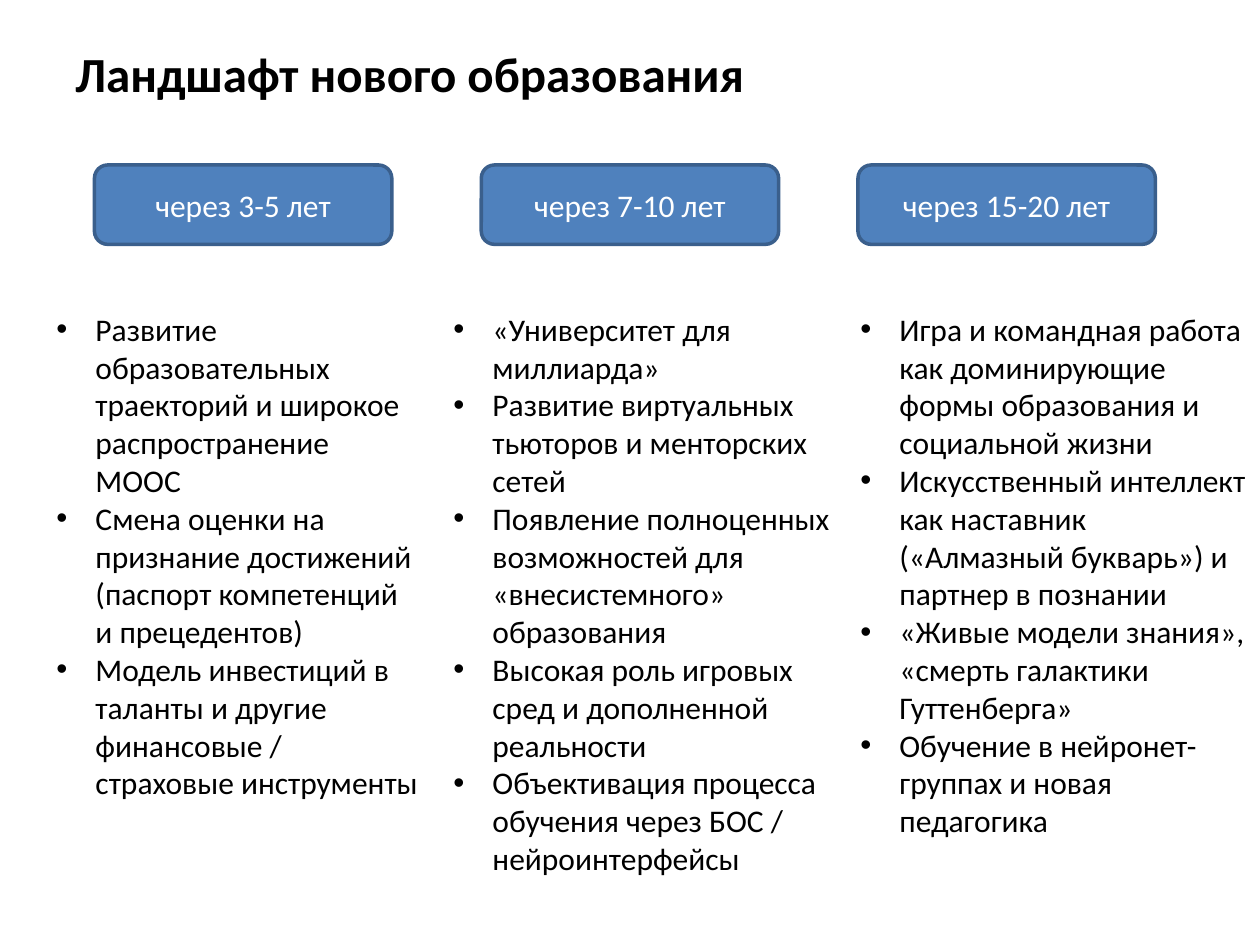
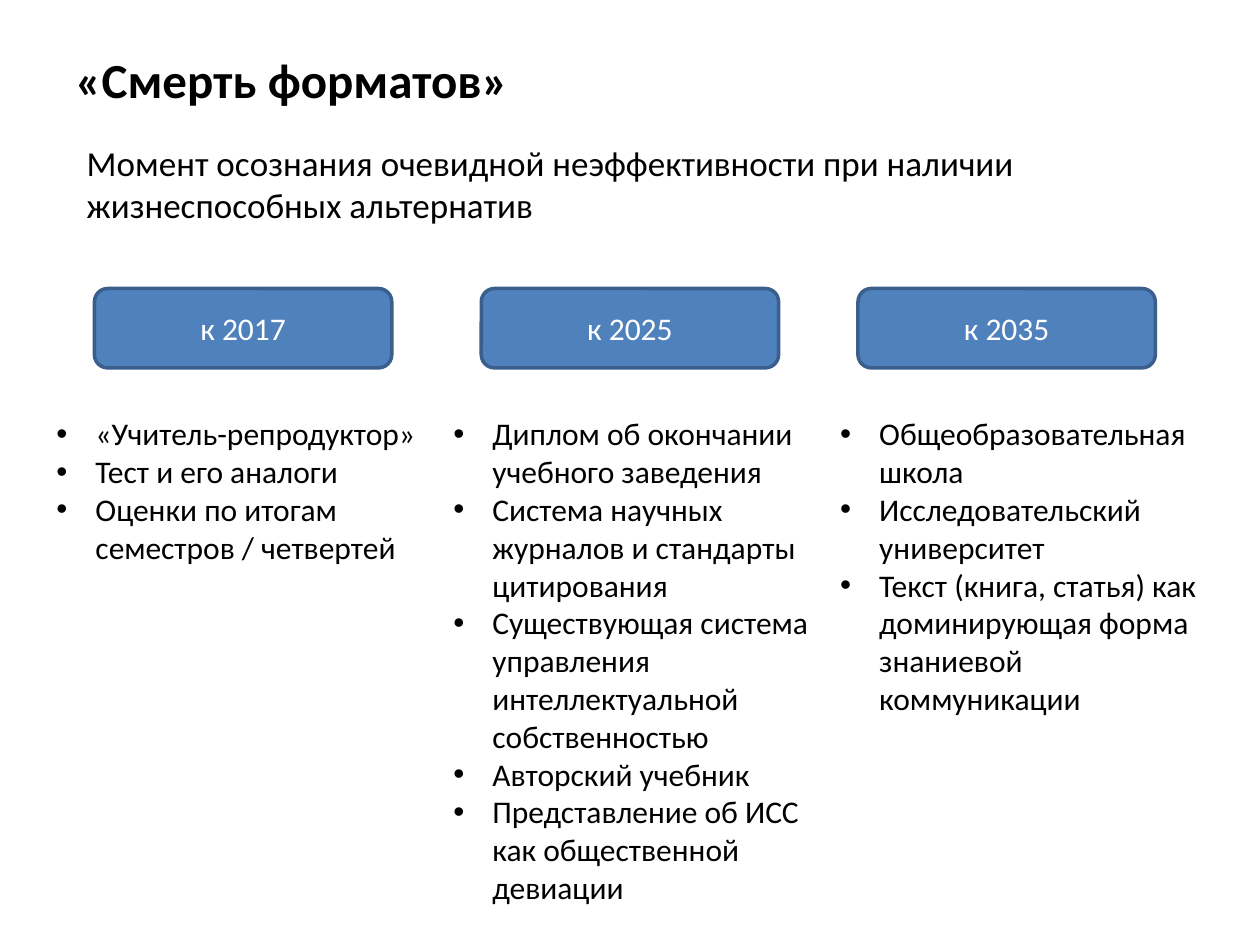
from pptx import Presentation
from pptx.dml.color import RGBColor
from pptx.enum.shapes import MSO_SHAPE
from pptx.enum.text import MSO_ANCHOR, MSO_AUTO_SIZE, PP_ALIGN
from pptx.oxml.xmlchemy import OxmlElement
from pptx.util import Inches, Pt

FONT = "Calibri"
BLACK = RGBColor(0x00, 0x00, 0x00)
WHITE = RGBColor(0xFF, 0xFF, 0xFF)
BLUE = RGBColor(0x4F, 0x81, 0xBD)
DARK_BLUE = RGBColor(0x3A, 0x5F, 0x8C)

PERIOD_LEFTS = (0.75, 3.82, 6.81)
PERIOD_WIDTH, PERIOD_HEIGHT = 2.36, 0.63
BULLET_INDENT = 0.31

LANDSCAPE = [
    ("через 3-5 лет", (0.35, 3.07, 4.34), [
        "Развитие образовательных траекторий и широкое распространение МООС",
        "Смена оценки на признание достижений (паспорт компетенций и прецедентов)",
        "Модель инвестиций в таланты и другие финансовые / страховые инструменты",
    ]),
    ("через 7-10 лет", (3.5, 3.31, 4.64), [
        "«Университет для миллиарда»",
        "Развитие виртуальных тьюторов и менторских сетей",
        "Появление полноценных возможностей для «внесистемного» образования",
        "Высокая роль игровых сред и дополненной реальности",
        "Объективация процесса обучения через БОС / нейроинтерфейсы",
    ]),
    ("через 15-20 лет", (6.73, 3.31, 4.95), [
        "Игра и командная работа как доминирующие формы образования и социальной жизни",
        "Искусственный интеллект как наставник («Алмазный букварь») и партнер в познании",
        "«Живые модели знания», «смерть галактики Гуттенберга»",
        "Обучение в нейронет-группах и новая педагогика",
    ]),
]

FORMATS = [
    ("к 2017", (0.35, 3.07, 1.62), [
        "«Учитель-репродуктор»",
        "Тест и его аналоги",
        "Оценки по итогам семестров / четвертей",
    ]),
    ("к 2025", (3.5, 3.07, 4.04), [
        "Диплом об окончании учебного заведения",
        "Система научных журналов и стандарты цитирования",
        "Существующая система управления интеллектуальной собственностью",
        "Авторский учебник",
        "Представление об ИСС как общественной девиации",
    ]),
    ("к 2035", (6.57, 3.07, 2.83), [
        "Общеобразовательная школа",
        "Исследовательский университет",
        "Текст (книга, статья) как доминирующая форма знаниевой коммуникации",
    ]),
]


def add_bullet(para):
    """Give a paragraph a round bullet with a hanging indent."""
    properties = para._p.get_or_add_pPr()
    indent = Inches(BULLET_INDENT)
    properties.set("marL", str(indent))
    properties.set("indent", str(-indent))
    font = OxmlElement("a:buFont")
    font.set("typeface", "Arial")
    mark = OxmlElement("a:buChar")
    mark.set("char", "•")
    properties.extend([font, mark])


def write_text(frame, lines, size=18, color=BLACK, bold=False, align=PP_ALIGN.LEFT, bullets=False):
    """Write one paragraph per line into a text frame."""
    for index, line in enumerate(lines):
        para = frame.add_paragraph() if index else frame.paragraphs[0]
        para.alignment = align
        if bullets:
            add_bullet(para)
        span = para.add_run()
        span.text = line
        span.font.name = FONT
        span.font.size = Pt(size)
        span.font.bold = bold
        span.font.color.rgb = color


def add_text(page, lines, left, top, width, height, wrap=True, anchor=MSO_ANCHOR.TOP, **text_format):
    """Add a text box that grows with its text."""
    box = page.shapes.add_textbox(Inches(left), Inches(top), Inches(width), Inches(height))
    frame = box.text_frame
    frame.word_wrap = wrap
    frame.auto_size = MSO_AUTO_SIZE.SHAPE_TO_FIT_TEXT
    frame.vertical_anchor = anchor
    write_text(frame, lines, **text_format)


def add_title(page, text, top, width):
    """Add the bold slide title."""
    add_text(page, [text], 0.5, top, width, 0.57, wrap=False,
             anchor=MSO_ANCHOR.MIDDLE, size=28, bold=True)


def add_period(page, text, left, top):
    """Add a rounded period heading."""
    box = page.shapes.add_shape(MSO_SHAPE.ROUNDED_RECTANGLE, Inches(left), Inches(top),
                                Inches(PERIOD_WIDTH), Inches(PERIOD_HEIGHT))
    box.shadow.inherit = False
    box.fill.solid()
    box.fill.fore_color.rgb = BLUE
    box.line.color.rgb = DARK_BLUE
    box.line.width = Pt(2)
    box.text_frame.vertical_anchor = MSO_ANCHOR.MIDDLE
    write_text(box.text_frame, [text], color=WHITE, align=PP_ALIGN.CENTER)


def add_columns(page, columns, period_top, list_top):
    """Add three period headings with a bulleted list under each."""
    for period_left, (period, (left, width, height), items) in zip(PERIOD_LEFTS, columns):
        add_period(page, period, period_left, period_top)
        add_text(page, items, left, list_top, width, height, bullets=True)


def main():
    """Build both slides and save the deck."""
    deck = Presentation()
    deck.slide_width, deck.slide_height = Inches(10), Inches(7.5)
    blank = deck.slide_layouts[6]

    page = deck.slides.add_slide(blank)
    add_title(page, "Ландшафт нового образования", 0.29, 5.57)
    add_columns(page, LANDSCAPE, 1.31, 2.41)

    page = deck.slides.add_slide(blank)
    add_title(page, "«Смерть форматов»", 0.34, 3.67)
    add_columns(page, FORMATS, 2.29, 3.24)
    add_text(page, ["Момент осознания очевидной неэффективности при наличии жизнеспособных альтернатив"],
             0.59, 1.07, 7.87, 0.77, size=20)

    deck.save("out.pptx")


if __name__ == "__main__":
    main()
